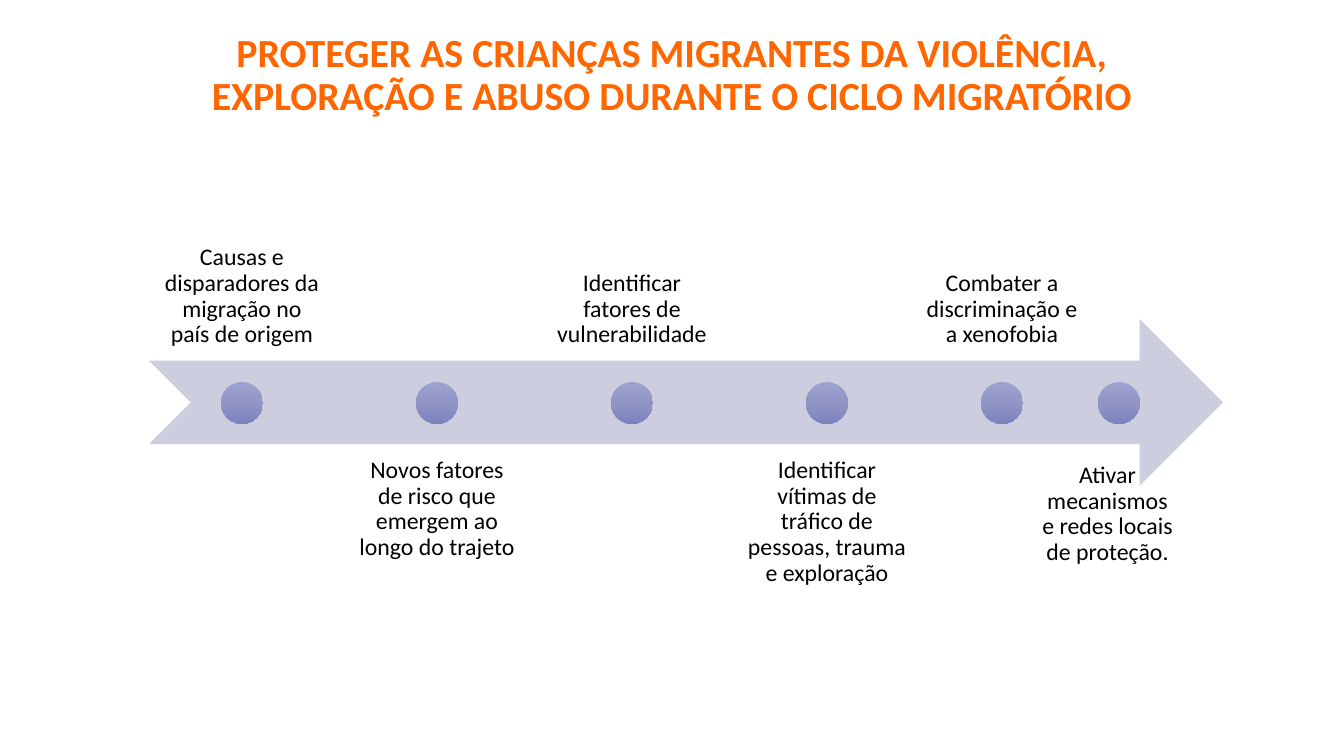
from copy import deepcopy

from pptx import Presentation
from pptx.dml.color import RGBColor
from pptx.enum.shapes import MSO_SHAPE
from pptx.enum.text import MSO_ANCHOR, PP_ALIGN
from pptx.oxml.ns import qn
from pptx.util import Pt

# Content
TITLE = ("PROTEGER AS CRIANÇAS MIGRANTES DA VIOLÊNCIA, "
         "EXPLORAÇÃO E ABUSO DURANTE O CICLO MIGRATÓRIO")
# (text, marker centre in px); labels alternate above and below the arrow
STAGES = [
    ("Causas e disparadores da migração no país de origem", 242),
    ("Novos fatores de risco que emergem ao longo do trajeto", 437),
    ("Identificar fatores de vulnerabilidade", 632),
    ("Identificar vítimas de tráfico de pessoas, trauma e exploração", 827),
    ("Combater a discriminação e a xenofobia", 1002),
]
FINAL_STAGE = ("Ativar mecanismos e redes locais de proteção.", 1119)

COLORS = {"title": "FF6600", "label": "000000", "arrow": "CCCEDF"}
MARKER_GRADIENT = ["9DA2CF", "9095C5", "7C82BD"]
FONT = "Calibri"

# Layout in px
SLIDE_W, SLIDE_H = 1344, 756
ARROW_LEFT, ARROW_TOP, ARROW_W, ARROW_H = 149, 319, 1074, 167
AXIS_Y = 403
MARKER = 42
LABEL_W, LABEL_H, LABEL_INSET = 185, 167, 13
BAND_TOP, BAND_BOTTOM = 361, 445


def px(length):
    return round(length * 914400 / 100.8)


def add_text(text, left, top, width, height, *, size, color, bold=False,
             anchor=MSO_ANCHOR.TOP, inset=10):
    box = slide.shapes.add_textbox(px(left), px(top), px(width), px(height))
    frame = box.text_frame
    frame.word_wrap = True
    frame.vertical_anchor = anchor
    frame.margin_left = frame.margin_right = px(inset)
    frame.margin_top = frame.margin_bottom = px(inset)
    paragraph = frame.paragraphs[0]
    paragraph.alignment = PP_ALIGN.CENTER
    paragraph.line_spacing = 0.9
    run = paragraph.add_run()
    run.text = text
    run.font.name = FONT
    run.font.size = Pt(size)
    run.font.bold = bold
    run.font.color.rgb = RGBColor.from_string(color)


def add_plain_shape(kind, left, top, width, height):
    shape = slide.shapes.add_shape(kind, px(left), px(top), px(width), px(height))
    shape.shadow.inherit = False
    shape.line.fill.background()
    return shape


def add_marker(center):
    marker = add_plain_shape(MSO_SHAPE.OVAL, center - MARKER / 2,
                             AXIS_Y - MARKER / 2, MARKER, MARKER)
    marker.fill.gradient()
    marker.fill.gradient_angle = 270
    # The default gradient has two stops; add the middle one
    stop_list = marker._element.spPr.find(qn("a:gradFill")).find(qn("a:gsLst"))
    stop_list.insert(1, deepcopy(stop_list[0]))
    for index, stop in enumerate(marker.fill.gradient_stops):
        stop.position = index / 2
        stop.color.rgb = RGBColor.from_string(MARKER_GRADIENT[index])


presentation = Presentation()
presentation.slide_width, presentation.slide_height = px(SLIDE_W), px(SLIDE_H)
slide = presentation.slides.add_slide(presentation.slide_layouts[6])

# Title
add_text(TITLE, 168, 21, 1008, 111, size=28.5, color=COLORS["title"],
         bold=True, anchor=MSO_ANCHOR.MIDDLE)

# Timeline arrow
arrow = add_plain_shape(MSO_SHAPE.NOTCHED_RIGHT_ARROW,
                        ARROW_LEFT, ARROW_TOP, ARROW_W, ARROW_H)
arrow.fill.solid()
arrow.fill.fore_color.rgb = RGBColor.from_string(COLORS["arrow"])

# Stages along the arrow
label_format = {"size": 17, "color": COLORS["label"], "inset": LABEL_INSET}
for index, (stage, center) in enumerate(STAGES):
    above = index % 2 == 0
    add_text(stage, center - LABEL_W / 2,
             BAND_TOP - LABEL_H if above else BAND_BOTTOM, LABEL_W, LABEL_H,
             anchor=MSO_ANCHOR.BOTTOM if above else MSO_ANCHOR.TOP,
             **label_format)
    add_marker(center)

# Final stage, with a narrower label beside the arrowhead
final_text, final_center = FINAL_STAGE
add_marker(final_center)
add_text(final_text, 1028, 450, 159, 157, **label_format)

presentation.save("out.pptx")
